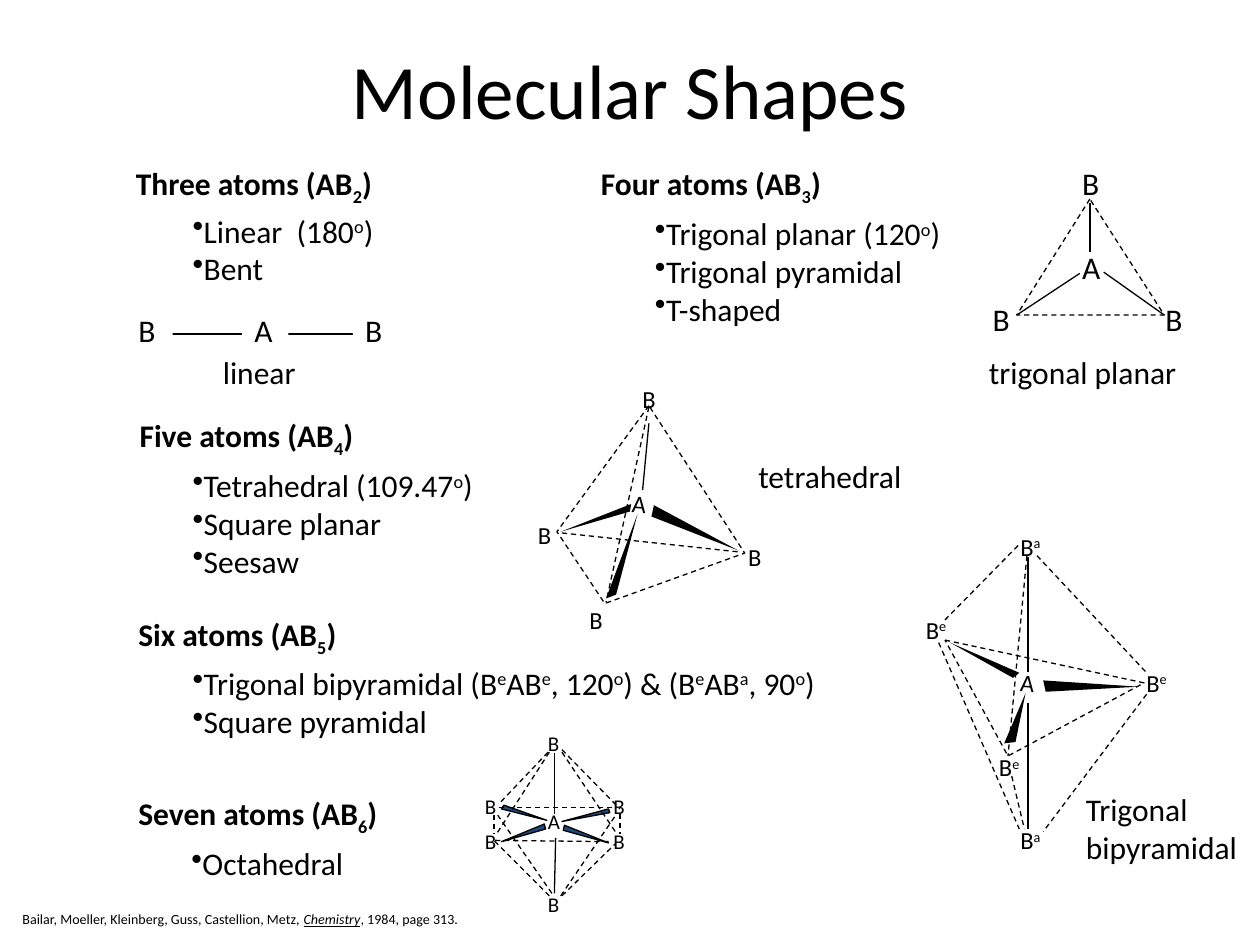
import pptx
import pptx.dml.color
import pptx.enum.dml
import pptx.enum.shapes
import pptx.enum.text
import pptx.oxml.ns
import pptx.util
from lxml import etree

Inches = pptx.util.Inches
Pt = pptx.util.Pt

BLACK = pptx.dml.color.RGBColor(0x00, 0x00, 0x00)
WHITE = pptx.dml.color.RGBColor(0xFF, 0xFF, 0xFF)
NAVY = pptx.dml.color.RGBColor(0x1F, 0x49, 0x7D)
FONT = "Calibri"
DASH = pptx.enum.dml.MSO_LINE.DASH
ATOM_BOX = {18: (0.37, 0.4), 14: (0.33, 0.33), 12: (0.31, 0.3)}
SUB = {"baseline": "-25000"}
SUP = {"baseline": "30000"}
BOOK = {"i": "1", "u": "sng"}


def format_run(r, size, bold=False):
    for name, value in {"name": FONT, "size": Pt(size), "bold": bold}.items():
        setattr(r.font, name, value)
    r.font.color.rgb = BLACK


def add_text(shapes, box, lines, size=18, accent=SUP, bold=False, bullet=False, fill=None):
    """Write the lines; every second part between | marks takes the accent."""
    box = [Inches(v) for v in box]
    if fill is None:
        sp = shapes.add_textbox(*box)
    else:
        sp = shapes.add_shape(pptx.enum.shapes.MSO_SHAPE.RECTANGLE, *box)
        sp.shadow.inherit = False
        sp.fill.solid()
        sp.fill.fore_color.rgb = fill
        sp.line.fill.background()
    tf = sp.text_frame
    frame = {"word_wrap": False, "auto_size": pptx.enum.text.MSO_AUTO_SIZE.SHAPE_TO_FIT_TEXT,
             "vertical_anchor": pptx.enum.text.MSO_ANCHOR.TOP}
    for name, value in frame.items():
        setattr(tf, name, value)
    for i, line in enumerate(lines):
        p = tf.add_paragraph() if i else tf.paragraphs[0]
        p.alignment = pptx.enum.text.PP_ALIGN.LEFT
        if bullet:
            etree.SubElement(p._p.get_or_add_pPr(), pptx.oxml.ns.qn("a:buChar")).set("char", "•")
        for j, part in enumerate(line.split("|")):
            if not part:
                continue
            r = p.add_run()
            r.text = part
            format_run(r, size, bold)
            if j % 2:
                for name, value in accent.items():
                    r._r.get_or_add_rPr().set(name, value)
    return sp


def add_atoms(shapes, size, atoms, fill=None):
    for label, x, y in atoms:
        width, height = ATOM_BOX[size]
        if "|" in label:
            width += 0.07
        add_text(shapes, (x, y, width, height), [label], size, fill=fill)


def style_line(line, dash=None):
    line.color.rgb = BLACK
    line.width = Pt(0.75)
    if dash:
        line.dash_style = dash


def add_lines(shapes, ends, dash=None):
    for x1, y1, x2, y2 in ends:
        c = shapes.add_connector(pptx.enum.shapes.MSO_CONNECTOR.STRAIGHT,
                                 Inches(x1), Inches(y1), Inches(x2), Inches(y2))
        style_line(c.line, dash)
        etree.SubElement(c._element.spPr, pptx.oxml.ns.qn("a:effectLst"))


def add_polygon(shapes, points, fill=None, outlined=True, dash=None):
    points = [(Inches(x), Inches(y)) for x, y in points]
    fb = shapes.build_freeform(*points[0], scale=1.0)
    fb.add_line_segments(points[1:], close=True)
    sp = fb.convert_to_shape()
    sp.shadow.inherit = False
    if fill is None:
        sp.fill.background()
    else:
        sp.fill.solid()
        sp.fill.fore_color.rgb = fill
    if outlined:
        style_line(sp.line, dash)
    else:
        sp.line.fill.background()


def add_wedges(shapes, wedges, fill=BLACK, outlined=False):
    for points in wedges:
        add_polygon(shapes, points, fill, outlined)


def add_linear(shapes):
    add_lines(shapes, [(1.19, 2.65, 2.98, 2.65)])
    add_atoms(shapes, 18, [("B", 1, 2.42), ("B", 2.8, 2.42), ("A", 1.92, 2.42)], WHITE)


def add_trigonal_planar(shapes):
    add_polygon(shapes, [(8.65, 1.58), (8.07, 2.5), (9.24, 2.5)], dash=DASH)
    add_atoms(shapes, 18, [("B", 8.49, 1.25), ("B", 9.15, 2.33), ("B", 7.78, 2.33)])
    add_atoms(shapes, 18, [("A", 8.49, 1.92)], WHITE)
    add_lines(shapes, [(8.07, 2.5, 8.57, 2.17), (9.24, 2.5, 8.76, 2.16),
                       (8.65, 1.61, 8.65, 2)])


def add_central_atom(shapes, x, y):
    add_text(shapes, (x, y, *ATOM_BOX[14]), ["A"], 14).rotation = 5


def add_tetrahedral(shapes):
    add_wedges(shapes, [[(5.19, 4.01), (5.86, 4.37), (5.17, 4.1)],
                        [(5.06, 4.08), (4.81, 4.75), (4.89, 4.72)],
                        [(4.45, 4.22), (5.01, 4), (5, 4.06)]])
    add_polygon(shapes, [(5.15, 3.22), (4.42, 4.22), (4.8, 4.79), (5.91, 4.39)], dash=DASH)
    add_lines(shapes, [(4.46, 4.23, 5.86, 4.38), (5.15, 3.23, 4.81, 4.78)], DASH)
    add_lines(shapes, [(5.15, 3.36, 5.1, 3.89)])
    add_central_atom(shapes, 4.92, 3.83)
    add_atoms(shapes, 14, [("B", 5, 3), ("B", 5.84, 4.25), ("B", 4.17, 4.08), ("B", 4.58, 4.75)])


def add_trigonal_bipyramidal(shapes):
    add_polygon(shapes, [(7.5, 5.08), (9.08, 5.42), (8, 6)], dash=DASH)
    add_wedges(shapes, [[(8.28, 5.4), (9.04, 5.45), (8.3, 5.49)],
                        [(8.14, 5.5), (7.97, 5.9), (8.06, 5.89)],
                        [(7.54, 5.1), (8.09, 5.34), (8.04, 5.38)]])
    add_central_atom(shapes, 8, 5.25)
    add_atoms(shapes, 14, [("B|e", 9, 5.25), ("B|e", 7.25, 4.83), ("B|e", 7.83, 5.92),
                           ("B|a", 8, 4.17), ("B|a", 8, 6.5)])
    add_lines(shapes, [(8.16, 4.42, 8.16, 5.33), (8.16, 5.58, 8.16, 6.58)])
    add_lines(shapes, [(8.08, 4.33, 7.5, 4.92), (8.23, 4.41, 9.11, 5.35),
                       (8.15, 4.41, 8, 6), (7.45, 5.1, 8.09, 6.58),
                       (9.1, 5.51, 8.28, 6.6), (8.03, 6.16, 8.13, 6.58)], DASH)


def add_octahedral(shapes):
    corners = [("B", x, y) for x in (3.75, 4.77) for y in (6.25, 6.53)]
    axis = [("B", 4.25, 5.75), ("A", 4.25, 6.37), ("B", 4.25, 7.03)]
    add_atoms(shapes, 12, corners + axis)
    add_wedges(shapes, [[(4, 6.39), (4.34, 6.51), (3.98, 6.42)],
                        [(4.33, 6.58), (4.32, 6.54), (3.98, 6.68)],
                        [(4.46, 6.52), (4.84, 6.45), (4.83, 6.42)],
                        [(4.47, 6.59), (4.48, 6.55), (4.83, 6.69)]], NAVY, True)
    add_lines(shapes, [(4.4, 5.98, 4.4, 6.46), (4.41, 6.65, 4.4, 7.09)])
    base = [(3.96, 6.41, 4.86, 6.41), (3.93, 6.67, 4.86, 6.68),
            (3.92, 6.47, 3.92, 6.62), (4.92, 6.46, 4.92, 6.62)]
    upper = [(4.35, 5.97, 3.96, 6.38), (4.36, 5.97, 3.94, 6.62),
             (4.46, 5.95, 4.92, 6.42), (4.46, 5.97, 4.89, 6.61)]
    lower = [(4.38, 7.09, 3.95, 6.47), (4.36, 7.11, 3.92, 6.67),
             (4.46, 7.11, 4.88, 6.7), (4.45, 7.11, 4.88, 6.48)]
    add_lines(shapes, base + upper + lower, DASH)


def add_title(s, text):
    sp = s.shapes.title
    box = {"left": 0.5, "top": 0.08, "width": 9, "height": 1.25}
    for name, value in box.items():
        setattr(sp, name, Inches(value))
    tf = sp.text_frame
    tf.vertical_anchor = pptx.enum.text.MSO_ANCHOR.MIDDLE
    p = tf.paragraphs[0]
    p.alignment = pptx.enum.text.PP_ALIGN.CENTER
    r = p.add_run()
    r.text = text
    format_run(r, 44)


def main():
    prs = pptx.Presentation()
    prs.slide_width, prs.slide_height = Inches(10), Inches(7.5)
    s = prs.slides.add_slide(prs.slide_layouts[5])
    add_title(s, "Molecular Shapes")

    headings = [("Three", 2, 0.98, 1.25, 2.38), ("Four", 3, 4.67, 1.25, 2.25),
                ("Five", 4, 1.01, 3.25, 2.2), ("Six", 5, 1, 4.83, 2.07),
                ("Seven", 6, 1, 6.25, 2.43)]
    for count, index, x, y, width in headings:
        add_text(s.shapes, (x, y, width, 0.4), [f"{count} atoms (AB|{index}|)"],
                 accent=SUB, bold=True)

    shape_lists = [
        ((1.43, 1.63, 1.8, 0.7), ["Linear  (180|o|)", "Bent"]),
        ((5.1, 1.65, 2.7, 1), ["Trigonal planar (120|o|)", "Trigonal pyramidal", "T-shaped"]),
        ((1.43, 3.65, 2.66, 1), ["Tetrahedral (109.47|o|)", "Square planar", "Seesaw"]),
        ((1.43, 5.22, 5.77, 0.7),
         ["Trigonal bipyramidal (B|e|AB|e|, 120|o|) & (B|e|AB|a|, 90|o|)", "Square pyramidal"]),
        ((1.42, 6.65, 1.51, 0.4), ["Octahedral"])]
    for box, lines in shape_lists:
        add_text(s.shapes, box, lines, bullet=True)

    for add_molecule in (add_linear, add_trigonal_planar, add_tetrahedral,
                         add_trigonal_bipyramidal, add_octahedral):
        add_molecule(s.shapes.add_group_shape().shapes)

    captions = [((1.67, 2.75, 0.81, 0.4), ["linear"]),
                ((7.75, 2.75, 1.78, 0.4), ["trigonal planar"]),
                ((5.92, 3.58, 1.4, 0.4), ["tetrahedral"]),
                ((8.52, 6.22, 1.48, 0.7), ["Trigonal", "bipyramidal"])]
    for box, lines in captions:
        add_text(s.shapes, box, lines)
    add_text(s.shapes, (0.08, 7.18, 4.06, 0.23),
             ["Bailar, Moeller, Kleinberg, Guss, Castellion, Metz, |Chemistry|, 1984, page 313."],
             8, BOOK)
    prs.save("out.pptx")


if __name__ == "__main__":
    main()
